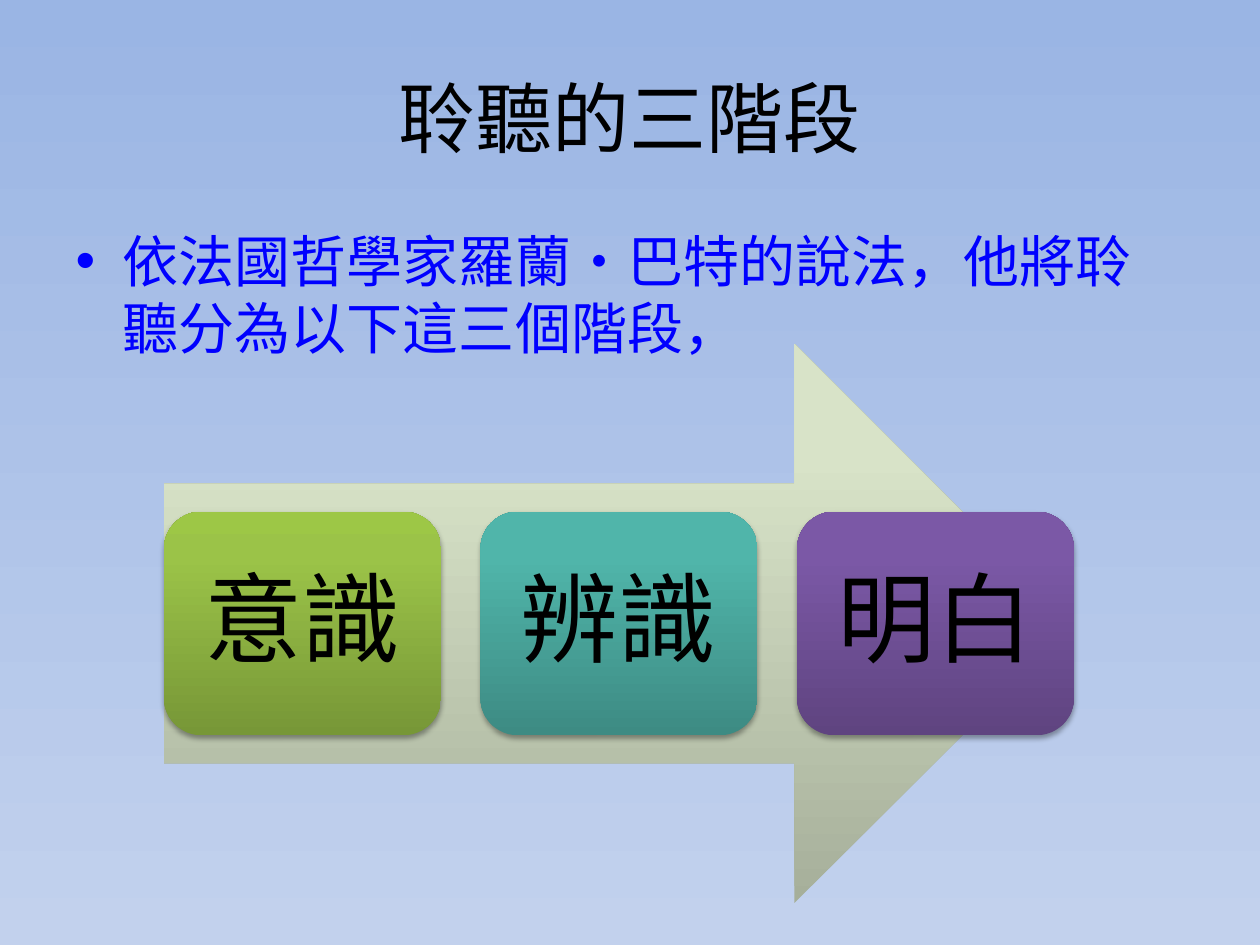
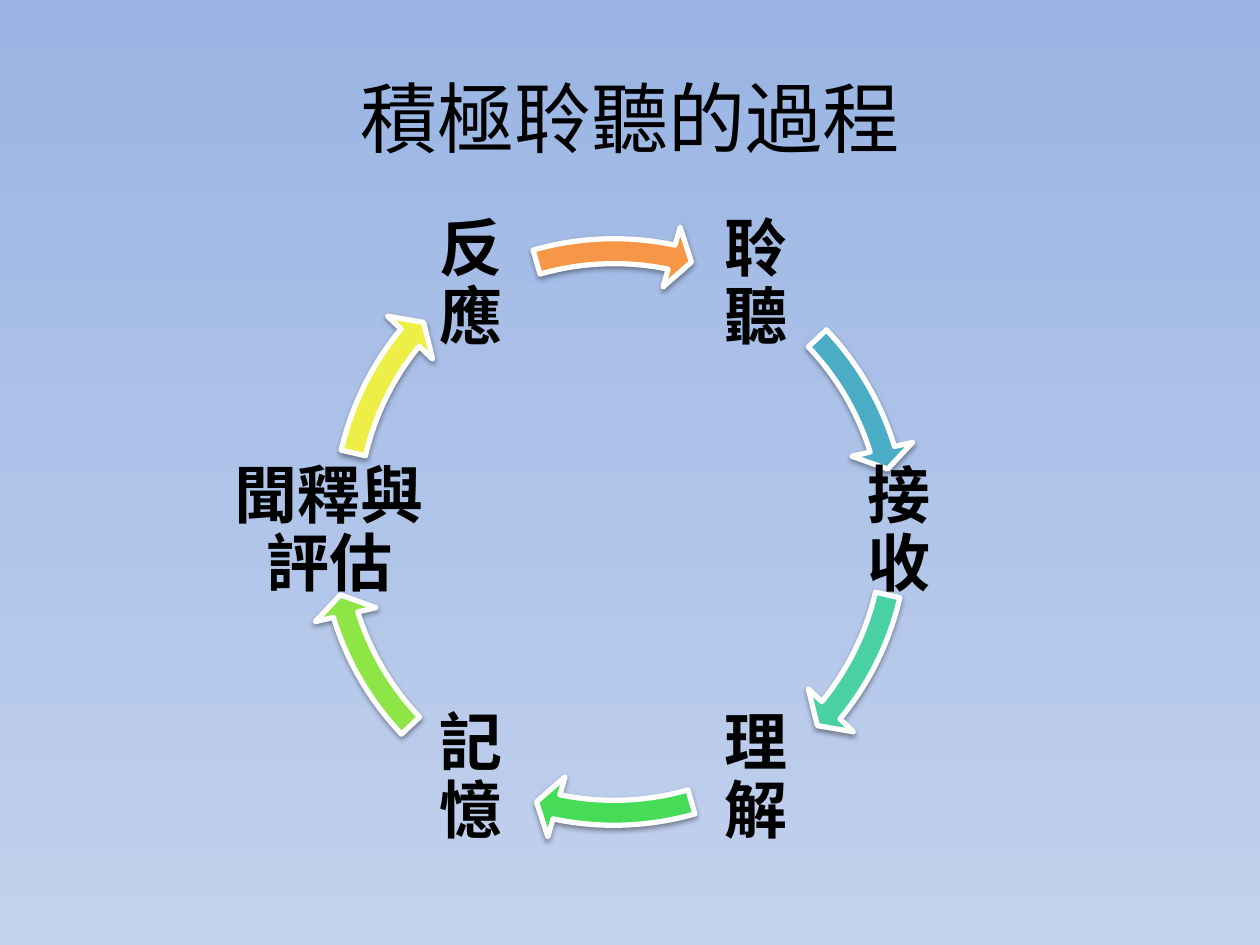
import math

from lxml import etree
from pptx import Presentation
from pptx.dml.color import RGBColor
from pptx.enum import shapes, text
from pptx.oxml.ns import qn
from pptx.util import Emu, Pt

EMU_PER_PX = 914400 / 126
FONT = "Noto Sans CJK SC"
BLACK, WHITE, BLUE = "000000", "FFFFFF", "0000FF"
BACKGROUND = [(0, "9AB5E4"), (100, "C2D1ED")]

ARROW_STOPS = [(0, "A6AF9A"), (80, "D8E3C8"), (100, "D9E4C8")]
STAGES = [
    ("意識", ("779737", "9BC348", "9DC746")),
    ("辨識", ("3D8B83", "50B5AA", "4EB8AC")),
    ("明白", ("5F4480", "7B58A6", "7C57A8")),
]
# label, label width, arrow colour, arrow offset from the ring
STEPS = [
    ("聆聽", 127, "4BACC6", (0, 0)),
    ("接收", 127, "49D1A3", (0, 0)),
    ("理解", 127, "47DC57", (0, 0)),
    ("記憶", 127, "8DE646", (0, 0)),
    ("聞釋與\v評估", 270, "EEEF46", (13, -16)),
    ("反應", 127, "F79646", (0, 0)),
]
# start and end degrees of the first three arrows; the rest face them
ARCS = [(316.41, 342.87), (12.96, 39.42), (73.99, 101.83)]


def px(*lengths):
    return [Emu(round(length * EMU_PER_PX)) for length in lengths]


def color(hex_code):
    return RGBColor.from_string(hex_code)


def add_element(parent, tag, **attributes):
    element = etree.SubElement(parent, qn(tag))
    for name, value in attributes.items():
        element.set(name, str(value))
    return element


def set_gradient(owner, fill, stops, upward):
    fill.gradient()
    fill.gradient_angle = 90 if upward else 270
    stop_list = next(owner.element.iter(qn("a:gsLst")))
    for stop in list(stop_list):
        stop_list.remove(stop)
    for percent, hex_code in stops:
        stop = add_element(stop_list, "a:gs", pos=percent * 1000)
        add_element(stop, "a:srgbClr", val=hex_code)


def set_shadow(shape, opacity, distance):
    shape.shadow.inherit = False
    effects = shape.element.spPr.find(qn("a:effectLst"))
    shadow = add_element(effects, "a:outerShdw", blurRad=Pt(3.1), dist=Pt(distance),
                         dir=90 * 60000, rotWithShape=0)
    black = add_element(shadow, "a:srgbClr", val=BLACK)
    add_element(black, "a:alpha", val=opacity * 1000)


def write(frame, words, size, hex_code=BLACK, bold=False):
    frame.text = words
    para = frame.paragraphs[0]
    para.space_before = Pt(0)
    font = para.font
    font.size, font.bold, font.name = Pt(size), bold, FONT
    font.color.rgb = color(hex_code)
    latin = next(para._p.iter(qn("a:latin")))
    east_asian = etree.Element(qn("a:ea"), typeface=FONT)
    latin.addnext(east_asian)
    return para


def write_label(frame, words, size, margin, bold=False):
    """Fill a centred diagram label with tight line spacing."""
    para = write(frame, words, size, bold=bold)
    para.alignment = text.PP_ALIGN.CENTER
    para.line_spacing = 0.9
    para.space_after = Pt(size * 0.35)
    frame.word_wrap = True
    frame.vertical_anchor = text.MSO_ANCHOR.MIDDLE
    (inset,) = px(margin)
    frame.margin_left = frame.margin_right = inset
    frame.margin_top = frame.margin_bottom = inset


def place(shape, left, top, width, height):
    shape.left, shape.top, shape.width, shape.height = px(left, top, width, height)


def add_page(deck, layout_index, title):
    page = deck.slides.add_slide(deck.slide_layouts[layout_index])
    place(page.shapes.title, 63, 38, 1134, 157)
    frame = page.shapes.title.text_frame
    frame.vertical_anchor = text.MSO_ANCHOR.MIDDLE
    write(frame, title, 44).alignment = text.PP_ALIGN.CENTER
    return page


def add_stage_arrow(page, left, top, width, height):
    arrow = page.shapes.add_shape(shapes.MSO_SHAPE.RIGHT_ARROW,
                                  *px(left, top, width, height))
    set_gradient(arrow, arrow.fill, ARROW_STOPS, upward=True)
    arrow.line.fill.background()
    arrow.shadow.inherit = False

    card_width, card_height = 277, height * 0.4
    step = (width - card_width) / (len(STAGES) - 1)
    card_top = top + (height - card_height) / 2
    for index, (name, shades) in enumerate(STAGES):
        card = page.shapes.add_shape(
            shapes.MSO_SHAPE.ROUNDED_RECTANGLE,
            *px(left + index * step, card_top, card_width, card_height))
        set_gradient(card, card.fill, zip((0, 80, 100), shades), upward=True)
        card.line.fill.background()
        set_shadow(card, 35, 1.8)
        write_label(card.text_frame, name, 56, 16)


def add_cycle(page, left, top, size):
    center_x, center_y = left + size / 2, top + size / 2
    radius, label_height = 285, 127
    for index, (name, width, hex_code, (dx, dy)) in enumerate(STEPS):
        angle = math.radians(60 * index - 60)
        label = page.shapes.add_textbox(*px(
            center_x + radius * math.cos(angle) - width / 2,
            center_y + radius * math.sin(angle) - label_height / 2,
            width, label_height))
        write_label(label.text_frame, name, 36, 6, bold=True)

        arrow = page.shapes.add_shape(shapes.MSO_SHAPE.CIRCULAR_ARROW,
                                      *px(left + dx, top + dy, size, size))
        half_turn = 180 * (index // len(ARCS))
        start, end = [(degrees + half_turn) % 360 for degrees in ARCS[index % len(ARCS)]]
        # angles are held in 60000ths of a degree, adjustments in 100000ths
        for number, value in enumerate((0.04, 2.51, end * 0.6, start * 0.6, 0.05)):
            arrow.adjustments[number] = value
        arrow.fill.solid()
        arrow.fill.fore_color.rgb = color(hex_code)
        arrow.line.color.rgb = color(WHITE)
        arrow.line.width = Pt(3)
        set_shadow(arrow, 38, 1.6)


def add_stages_page(deck):
    page = add_page(deck, 1, "聆聽的三階段")
    body = page.placeholders[1]
    place(body, 63, 220, 1134, 624)
    write(body.text_frame, "依法國哲學家羅蘭·巴特的說法，他將聆聽分為以下這三個階段，", 32, BLUE)
    add_stage_arrow(page, 164, 344, 910, 559)


def add_process_page(deck):
    page = add_page(deck, 5, "積極聆聽的過程")
    add_cycle(page, 302, 220, 624)


def main():
    deck = Presentation()
    deck.slide_width, deck.slide_height = px(1260, 945)
    master = deck.slide_master
    set_gradient(master, master.background.fill, BACKGROUND, upward=False)
    add_stages_page(deck)
    add_process_page(deck)
    deck.save("out.pptx")


if __name__ == "__main__":
    main()
